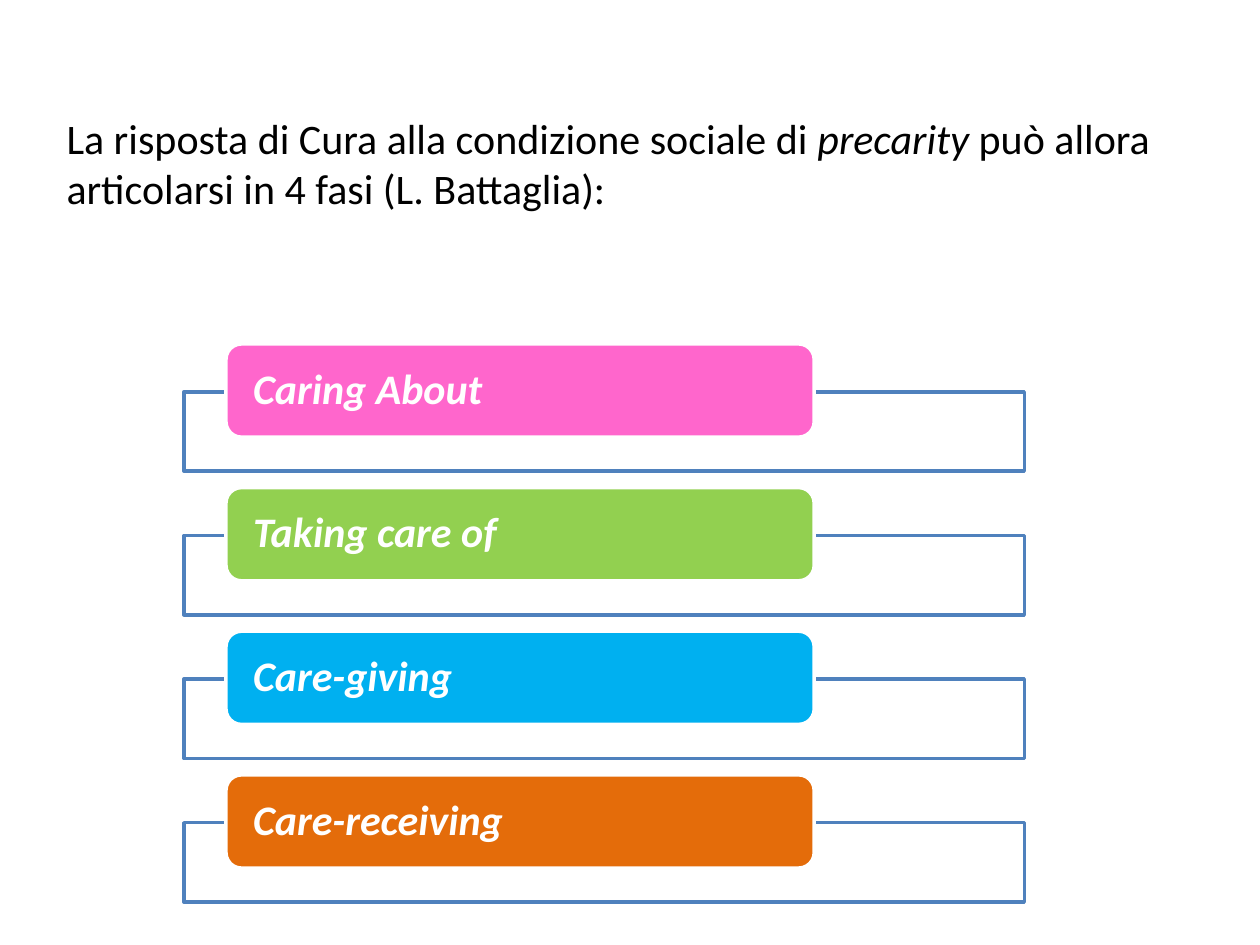
from pptx import Presentation
from pptx.dml.color import RGBColor
from pptx.enum import shapes, text
from pptx.util import Inches, Pt

COLORS = {
    "ink": "000000", "white": "FFFFFF", "frame": "4F81BD",
    "pink": "FF66CC", "green": "92D050", "blue": "00B0F0", "orange": "E46C0A",
}
INTRO = [
    ("La risposta di Cura alla condizione sociale di ", False),
    ("precarity", True),
    (" può allora articolarsi in 4 fasi (L. Battaglia):", False),
]
PHASES = [
    ("Caring About", "pink"),
    ("Taking care of", "green"),
    ("Care-giving", "blue"),
    ("Care-receiving", "orange"),
]


def color(name):
    """Return the named colour."""
    return RGBColor.from_string(COLORS[name])


def add_span(para, words, ink, bold=False, italic=False):
    """Add one run of 24 point Calibri to a paragraph."""
    span = para.add_run()
    span.text = words
    font = span.font
    font.name, font.size = "Calibri", Pt(24)
    font.bold, font.italic = bold, italic
    font.color.rgb = color(ink)


def add_panel(page, kind, left, top, width, height, fill, line):
    """Add a filled and outlined shape without a shadow."""
    panel = page.shapes.add_shape(
        kind, Inches(left), Inches(top), Inches(width), Inches(height))
    panel.shadow.inherit = False
    panel.fill.solid()
    panel.fill.fore_color.rgb = color(fill)
    panel.line.color.rgb = color(line)
    panel.line.width = Pt(2)
    return panel


def add_intro(page, left, top, width, height):
    """Place the introductory sentence in its box."""
    box = page.shapes.add_textbox(
        Inches(left), Inches(top), Inches(width), Inches(height))
    box.text_frame.word_wrap = True
    para = box.text_frame.paragraphs[0]
    for words, italic in INTRO:
        add_span(para, words, "ink", italic=italic)


def add_phase(page, left, top, width, label, fill):
    """Place one phase: an open frame with a coloured label over its top edge."""
    add_panel(page, shapes.MSO_SHAPE.RECTANGLE,
              left, top + 0.38, width, 0.63, "white", "frame")
    pill = add_panel(page, shapes.MSO_SHAPE.ROUNDED_RECTANGLE,
                     left + width * 0.05, top, width * 0.7, 0.74, fill, "white")
    frame = pill.text_frame
    frame.word_wrap = True
    frame.vertical_anchor = text.MSO_ANCHOR.MIDDLE
    frame.margin_left = frame.margin_right = Inches(0.18)
    frame.margin_top = frame.margin_bottom = 0
    para = frame.paragraphs[0]
    para.alignment = text.PP_ALIGN.LEFT
    para.line_spacing = 0.9
    add_span(para, label, "white", bold=True, italic=True)


def add_phases(page, left, top, width, height):
    """Stack the phases at equal steps down the given box."""
    block = 1.01
    step = (height - block) / (len(PHASES) - 1)
    for index, (label, fill) in enumerate(PHASES):
        add_phase(page, left, top + index * step, width, label, fill)


def main():
    """Build and save the slide."""
    deck = Presentation()
    deck.slide_width, deck.slide_height = Inches(10), Inches(7.5)
    page = deck.slides.add_slide(deck.slide_layouts[6])
    add_intro(page, 0.43, 0.84, 9.07, 6.06)
    add_phases(page, 1.46, 2.73, 6.67, 4.43)
    deck.save("out.pptx")


if __name__ == "__main__":
    main()
